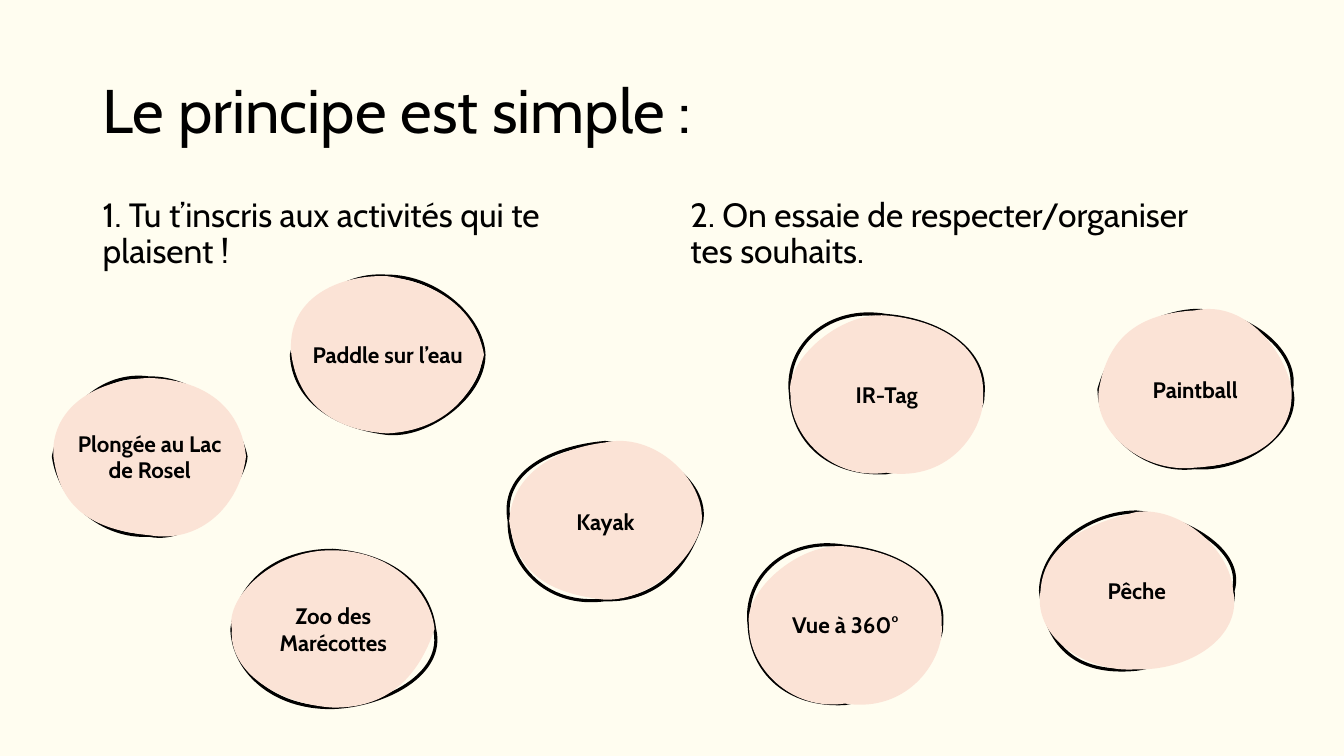
from lxml import etree
from pptx import Presentation
from pptx.dml.color import RGBColor
from pptx.enum.text import MSO_ANCHOR as Anchor, PP_ALIGN as Align
from pptx.oxml.ns import qn
from pptx.util import Pt

PX = 9144  # 100 px to the inch
CREAM = RGBColor(0xFF, 0xFD, 0xF0)
PEACH = RGBColor(0xFB, 0xE3, 0xD6)
BLACK = RGBColor(0, 0, 0)


def write(frame, text, anchor, align, spacing, font):
    frame.word_wrap = True
    frame.vertical_anchor = anchor
    paragraph = frame.paragraphs[0]
    paragraph.alignment = align
    paragraph.line_spacing = spacing
    run = paragraph.add_run()
    run.text = text
    for key, value in {"name": "Cabin", **font}.items():
        setattr(run.font, key, value)
    run.font.color.rgb = BLACK


def add_curve(path_list, size, anchors, controls, **flags):
    """Closed loop of four cubic curves through the anchors."""
    path = etree.SubElement(path_list, qn("a:path"), w=str(size[0]), h=str(size[1]), **flags)
    move = etree.SubElement(path, qn("a:moveTo"))
    etree.SubElement(move, qn("a:pt"), x=str(anchors[0][0]), y=str(anchors[0][1]))
    for i in range(4):
        curve = etree.SubElement(path, qn("a:cubicBezTo"))
        for x, y in (*controls[2 * i:2 * i + 2], anchors[(i + 1) % 4]):
            etree.SubElement(curve, qn("a:pt"), x=str(x), y=str(y))
    etree.SubElement(path, qn("a:close"))


deck = Presentation()
deck.slide_width, deck.slide_height = 1333 * PX, 750 * PX
slide = deck.slides.add_slide(deck.slide_layouts[6])
slide.background.fill.solid()
slide.background.fill.fore_color.rgb = CREAM

# Title and the two steps
headings = [
    ("Le principe est simple :", (92, 40, 1150, 145), Anchor.MIDDLE, 44),
    ("1. Tu t’inscris aux activités qui te plaisent !", (92, 184, 564, 90), Anchor.BOTTOM, 24),
    ("2. On essaie de respecter/organiser tes souhaits.", (675, 184, 545, 90), Anchor.BOTTOM, 24),
]
for text, place, anchor, size in headings:
    heading = slide.shapes.add_textbox(*(v * PX for v in place))
    write(heading.text_frame, text, anchor, Align.LEFT, 0.9, {"size": Pt(size)})

# Control points of each hand-drawn oval: outline, then fill,
# clockwise from the left and relative to the top left corner
KAYAK = (
    [(-9, 31), (39, 5), (152, 5), (197, 41), (180, 117), (150, 158), (36, 164), (-1, 120)],
    [(3, 30), (47, 6), (144, -11), (194, 37), (189, 107), (145, 157), (41, 150), (7, 131)])
PADDLE = (
    [(8, 41), (40, -4), (146, 0), (190, 43), (191, 119), (136, 160), (38, 149), (2, 120)],
    [(-6, 22), (47, -2), (152, 8), (184, 38), (183, 114), (155, 153), (41, 153), (7, 126)])
ZOO = (
    [(7, 27), (49, 0), (158, 4), (196, 35), (212, 123), (152, 154), (40, 157), (1, 119)],
    [(-7, 47), (41, -1), (158, 0), (197, 40), (185, 126), (154, 157), (49, 153), (-4, 122)])
PAINTBALL = (
    [(12, 34), (47, 3), (143, -1), (198, 37), (201, 120), (145, 160), (45, 162), (0, 122)],
    [(9, 27), (39, 3), (146, -11), (185, 42), (194, 130), (148, 153), (42, 162), (-7, 119)])
FISHING = (
    [(1, 34), (50, 0), (142, 4), (203, 37), (195, 117), (134, 151), (33, 162), (5, 131)],
    [(3, 32), (47, 11), (138, -6), (188, 36), (201, 125), (146, 158), (48, 160), (-8, 126)])
TAG_AND_VIEW = (
    [(-6, 30), (38, -10), (153, 5), (195, 37), (193, 106), (140, 149), (38, 159), (2, 125)],
    [(-6, 46), (48, -4), (152, 5), (193, 34), (194, 110), (160, 166), (42, 164), (-1, 120)])
DIVING = (
    [(7, 36), (46, -7), (142, -1), (184, 41), (189, 106), (140, 166), (49, 159), (6, 122)],
    [(-3, 33), (37, 2), (157, 2), (187, 35), (185, 126), (146, 165), (32, 150), (6, 124)])

# Activities: label, left, top, width, curves
activities = [
    ("Kayak", 505, 439, 191, KAYAK),
    ("Paddle sur l’eau", 289, 274, 191, PADDLE),
    ("Zoo des Marécottes", 230, 546, 201, ZOO),
    ("Paintball", 1090, 308, 191, PAINTBALL),
    ("Pêche", 1032, 508, 191, FISHING),
    ("IR-Tag", 784, 313, 191, TAG_AND_VIEW),
    ("Plongée au Lac de Rosel", 53, 375, 191, DIVING),
    ("Vue à 360°", 743, 542, 191, TAG_AND_VIEW),
]
HEIGHT = 156
for label, left, top, width, (outline, filling) in activities:
    anchors = [(0, HEIGHT // 2), (width // 2, 0), (width, HEIGHT // 2), (width // 2, HEIGHT)]
    builder = slide.shapes.build_freeform(*anchors[0], scale=PX)
    builder.add_line_segments(anchors[1:], close=True)
    oval = builder.convert_to_shape(left * PX, top * PX)

    # Swap the straight sides for the two curved loops
    path_list = oval._element.spPr.find(".//" + qn("a:pathLst"))
    path_list.remove(path_list[0])
    add_curve(path_list, (width, HEIGHT), anchors, outline, fill="none")
    add_curve(path_list, (width, HEIGHT), anchors, filling, stroke="0")

    oval.shadow.inherit = False
    oval.fill.solid()
    oval.fill.fore_color.rgb = PEACH
    oval.line.color.rgb = BLACK
    oval.line.width = Pt(2.25)
    write(oval.text_frame, label, Anchor.MIDDLE, Align.CENTER, 1.0, {"size": Pt(16), "bold": True})

deck.save("out.pptx")
